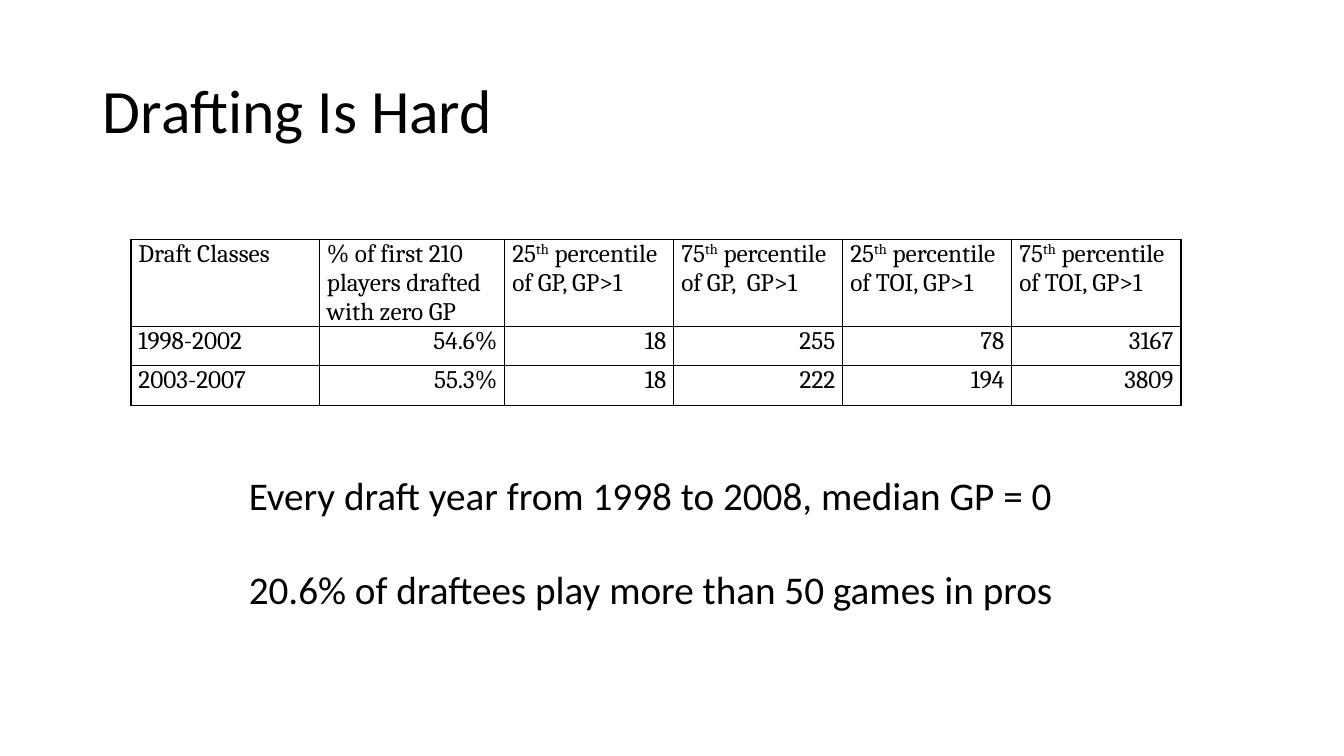
import pptx
import pptx.dml.color
import pptx.enum.text
import pptx.oxml
import pptx.oxml.ns
import pptx.util
from pptx.util import Cm

COLOURS = {"ink": "000000", "paper": "FFFFFF"}
ALIGN = pptx.enum.text.PP_ALIGN
ANCHOR = pptx.enum.text.MSO_ANCHOR

TITLE_FONT = {"name": "Calibri", "size": pptx.util.Pt(44), "bold": False}
NOTE_FONT = {"name": "Calibri", "size": pptx.util.Pt(28)}
CELL_FONT = {"name": "Cambria", "size": pptx.util.Pt(18), "bold": False}

COLUMN_WIDTHS = [4.75, 4.67] + [4.26] * 4
ROW_HEIGHTS = [1.98, 0.99, 0.99]
# A header given as a tuple has its second part raised
DRAFT_ROWS = [
    ["Draft Classes", "% of first 210 players drafted with zero GP",
     ("25", "th", " percentile of GP, GP>1"),
     ("75", "th", " percentile of GP,  GP>1"),
     ("25", "th", " percentile of TOI, GP>1"),
     ("75", "th", " percentile of TOI, GP>1")],
    ["1998-2002", "54.6%", "18", "255", "78", "3167"],
    ["2003-2007", "55.3%", "18", "222", "194", "3809"],
]
NOTES = [
    "Every draft year from 1998 to 2008, median GP = 0",
    "20.6% of draftees play more than 50 games in pros",
]


def colour(name):
    return pptx.dml.color.RGBColor.from_string(COLOURS[name])


def apply(target, values):
    for name, value in values.items():
        setattr(target, name, value)


def add_span(para, text, font, raised=False):
    span = para.add_run()
    span.text = text
    apply(span.font, font)
    span.font.color.rgb = colour("ink")
    if raised:
        span._r.get_or_add_rPr().set("baseline", "30000")


def add_borders(cell):
    properties = cell._tc.get_or_add_tcPr()
    for position, side in enumerate(("lnL", "lnR", "lnT", "lnB")):
        line = pptx.oxml.parse_xml(
            f'<a:{side} {pptx.oxml.ns.nsdecls("a")} w="12700"><a:solidFill>'
            f'<a:srgbClr val="{COLOURS["ink"]}"/></a:solidFill></a:{side}>')
        properties.insert(position, line)


def fill_cell(cell, content, alignment):
    apply(cell, {"margin_left": Cm(0.19), "margin_right": Cm(0.19),
                 "margin_top": 0, "margin_bottom": 0,
                 "vertical_anchor": ANCHOR.TOP})
    cell.fill.background()
    add_borders(cell)
    para = cell.text_frame.paragraphs[0]
    apply(para, {"alignment": alignment, "space_after": pptx.util.Pt(11)})
    parts = content if isinstance(content, tuple) else (content,)
    for index, part in enumerate(parts):
        add_span(para, part, CELL_FONT, raised=index == 1)


def set_title(page, text):
    title = page.shapes.title
    apply(title, {"left": Cm(2.34), "top": Cm(1.02),
                  "width": Cm(29.21), "height": Cm(3.68)})
    apply(title.text_frame, {"vertical_anchor": ANCHOR.MIDDLE, "word_wrap": True,
                             "auto_size": pptx.enum.text.MSO_AUTO_SIZE.NONE})
    para = title.text_frame.paragraphs[0]
    apply(para, {"alignment": ALIGN.LEFT, "line_spacing": 0.9})
    add_span(para, text, TITLE_FONT)


def add_draft_table(page):
    table = page.shapes.add_table(
        len(ROW_HEIGHTS), len(COLUMN_WIDTHS), Cm(3.3), Cm(6.03),
        Cm(sum(COLUMN_WIDTHS)), Cm(sum(ROW_HEIGHTS))).table
    apply(table, {"first_row": False, "horz_banding": False})
    for column, width in zip(table.columns, COLUMN_WIDTHS):
        column.width = Cm(width)
    for row, height in zip(table.rows, ROW_HEIGHTS):
        row.height = Cm(height)
    for r, contents in enumerate(DRAFT_ROWS):
        for c, content in enumerate(contents):
            alignment = ALIGN.RIGHT if r and c else ALIGN.LEFT
            fill_cell(table.cell(r, c), content, alignment)


def add_notes_box(page):
    box = page.shapes.add_textbox(Cm(6.02), Cm(11.76), Cm(21), Cm(3.84))
    frame = box.text_frame
    frame.word_wrap = True
    for index, note in enumerate(NOTES):
        para = frame.add_paragraph() if index else frame.paragraphs[0]
        if index:
            para.space_before = pptx.util.Pt(33)
        add_span(para, note, NOTE_FONT)


def main():
    deck = pptx.Presentation()
    apply(deck, {"slide_width": Cm(33.87), "slide_height": Cm(19.05)})
    page = deck.slides.add_slide(deck.slide_layouts[5])
    page.background.fill.solid()
    page.background.fill.fore_color.rgb = colour("paper")
    set_title(page, "Drafting Is Hard")
    add_draft_table(page)
    add_notes_box(page)
    deck.save("out.pptx")


if __name__ == "__main__":
    main()
